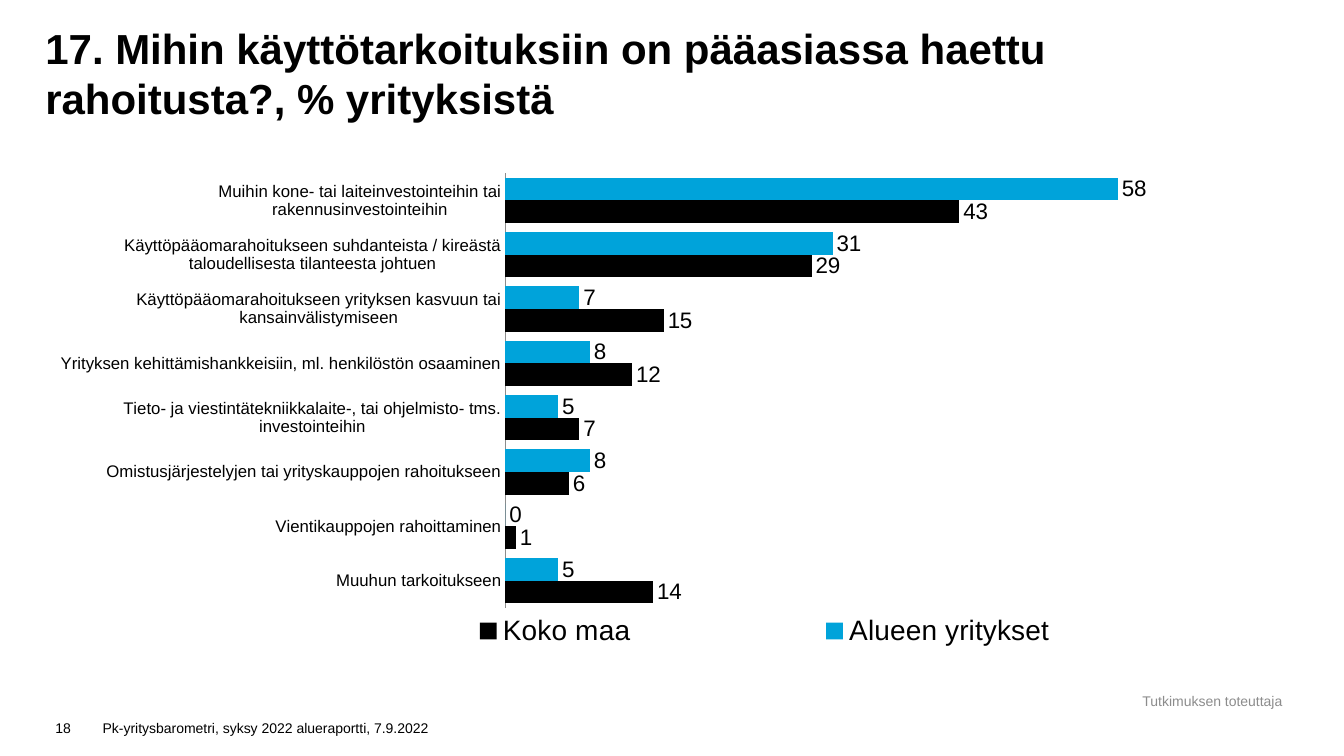
from lxml import etree
from pptx import Presentation
from pptx.chart.data import CategoryChartData
from pptx.dml.color import RGBColor
from pptx.enum.chart import (XL_CHART_TYPE as ChartType, XL_LABEL_POSITION as LabelPosition,
                             XL_LEGEND_POSITION as LegendPosition, XL_TICK_MARK as TickMark)
from pptx.enum.text import MSO_ANCHOR as Anchor, PP_ALIGN as Align
from pptx.oxml.ns import qn
from pptx.util import Inches, Pt

FONT = "Arial"
BLACK, GREY, BLUE = "000000", "8C8C8C", "00A3DA"

TITLE = "17. Mihin käyttötarkoituksiin on pääasiassa haettu rahoitusta?, % yrityksistä"
PAGE_NUMBER = "18"
FOOTER = "Pk-yritysbarometri, syksy 2022 alueraportti, 7.9.2022"
CREDIT = "Tutkimuksen toteuttaja"

# purpose of financing, Alueen yritykset, Koko maa
REGIONS = [("Alueen yritykset", BLUE), ("Koko maa", BLACK)]
PURPOSES = [
    ("Muihin kone- tai laiteinvestointeihin tai rakennusinvestointeihin", 58, 43),
    ("Käyttöpääomarahoitukseen suhdanteista / kireästä taloudellisesta tilanteesta johtuen", 31, 29),
    ("Käyttöpääomarahoitukseen yrityksen kasvuun tai kansainvälistymiseen", 7, 15),
    ("Yrityksen kehittämishankkeisiin, ml. henkilöstön osaaminen", 8, 12),
    ("Tieto- ja viestintätekniikkalaite-, tai ohjelmisto- tms. investointeihin", 5, 7),
    ("Omistusjärjestelyjen tai yrityskauppojen rahoitukseen", 8, 6),
    ("Vientikauppojen rahoittaminen", 0, 1),
    ("Muuhun tarkoitukseen", 5, 14),
]
LEFT, WIDTH = 0.45, 12.3
PLOT_AREA = (0.371, 0.033, 0.596, 0.842)
LEGEND_AREA = (0.2, 0.87, 0.76, 0.1)


def rgb(color):
    return RGBColor.from_string(color)


def set_font(font, size, color=BLACK, bold=False):
    font.name, font.size, font.bold = FONT, Pt(size), bold
    font.color.rgb = rgb(color)


def add_text(slide, text, box, size=10, color=BLACK, bold=False,
             align=Align.LEFT, anchor=Anchor.BOTTOM, insets=(0.1, 0.05)):
    frame = slide.shapes.add_textbox(*map(Inches, box)).text_frame
    frame.word_wrap, frame.vertical_anchor = True, anchor
    frame.margin_left = frame.margin_right = Inches(insets[0])
    frame.margin_top = frame.margin_bottom = Inches(insets[1])
    paragraph = frame.paragraphs[0]
    paragraph.alignment = align
    run = paragraph.add_run()
    run.text = text
    set_font(run.font, size, color, bold)


def manual_layout(area, inner=False):
    """Return a c:layout element with a fixed place, in fractions of the chart."""
    layout = etree.Element(qn("c:layout"))
    manual = etree.SubElement(layout, qn("c:manualLayout"))
    settings = [("layoutTarget", "inner")] if inner else []
    settings += [("xMode", "edge"), ("yMode", "edge")]
    settings += zip("xywh", area)
    for tag, value in settings:
        etree.SubElement(manual, qn(f"c:{tag}")).set("val", str(value))
    return layout


def place(parent, layout, before):
    for old in parent.findall(qn("c:layout")):
        parent.remove(old)
    parent.find(qn(before)).addprevious(layout)


def add_purpose_chart(slide):
    purposes, *region_values = zip(*PURPOSES)
    data = CategoryChartData(number_format="#,##0")
    data.categories = purposes
    for (region, _), values in zip(REGIONS, region_values):
        data.add_series(region, values)
    chart = slide.shapes.add_chart(ChartType.BAR_CLUSTERED, Inches(LEFT), Inches(1.55),
                                   Inches(WIDTH), Inches(5.12), data).chart
    set_font(chart.font, 20)
    chart.has_title = False

    bars = chart.plots[0]
    bars.gap_width, bars.overlap, bars.vary_by_categories = 40, 0, False
    for series, (_, color) in zip(bars.series, REGIONS):
        series.format.fill.solid()
        series.format.fill.fore_color.rgb = rgb(color)
        labels = series.data_labels
        labels.show_value, labels.position = True, LabelPosition.OUTSIDE_END
        labels.number_format, labels.number_format_is_linked = "#,##0", False
        set_font(labels.font, 16)

    purpose_axis, percent_axis = chart.category_axis, chart.value_axis
    purpose_axis.reverse_order = True
    purpose_axis.major_tick_mark = purpose_axis.minor_tick_mark = TickMark.NONE
    purpose_axis.format.line.color.rgb = rgb(GREY)
    purpose_axis.format.line.width = Pt(0.75)
    set_font(purpose_axis.tick_labels.font, 12)
    percent_axis.minimum_scale, percent_axis.maximum_scale = 0, 70
    percent_axis.has_major_gridlines = percent_axis.visible = False

    chart.has_legend = True
    legend = chart.legend
    legend.position, legend.include_in_layout = LegendPosition.RIGHT, False
    set_font(legend.font, 20)
    plot_area = chart.element.find(".//" + qn("c:plotArea"))
    place(plot_area, manual_layout(PLOT_AREA, inner=True), "c:barChart")
    place(chart.element.find(".//" + qn("c:legend")), manual_layout(LEGEND_AREA), "c:overlay")


def main():
    deck = Presentation()
    deck.slide_width, deck.slide_height = Inches(13.33), Inches(7.5)
    slide = deck.slides.add_slide(deck.slide_layouts[6])
    add_text(slide, CREDIT, (11.16, 6.82, 1.73, 0.26), color=GREY,
             align=Align.CENTER, anchor=Anchor.MIDDLE)
    add_text(slide, FOOTER, (0.92, 7, 4.17, 0.35))
    add_text(slide, PAGE_NUMBER, (LEFT, 7, 0.47, 0.35))
    add_text(slide, TITLE, (LEFT, 0, WIDTH, 1.22), size=30, bold=True, insets=(0, 0))
    add_purpose_chart(slide)
    deck.save("out.pptx")


if __name__ == "__main__":
    main()
